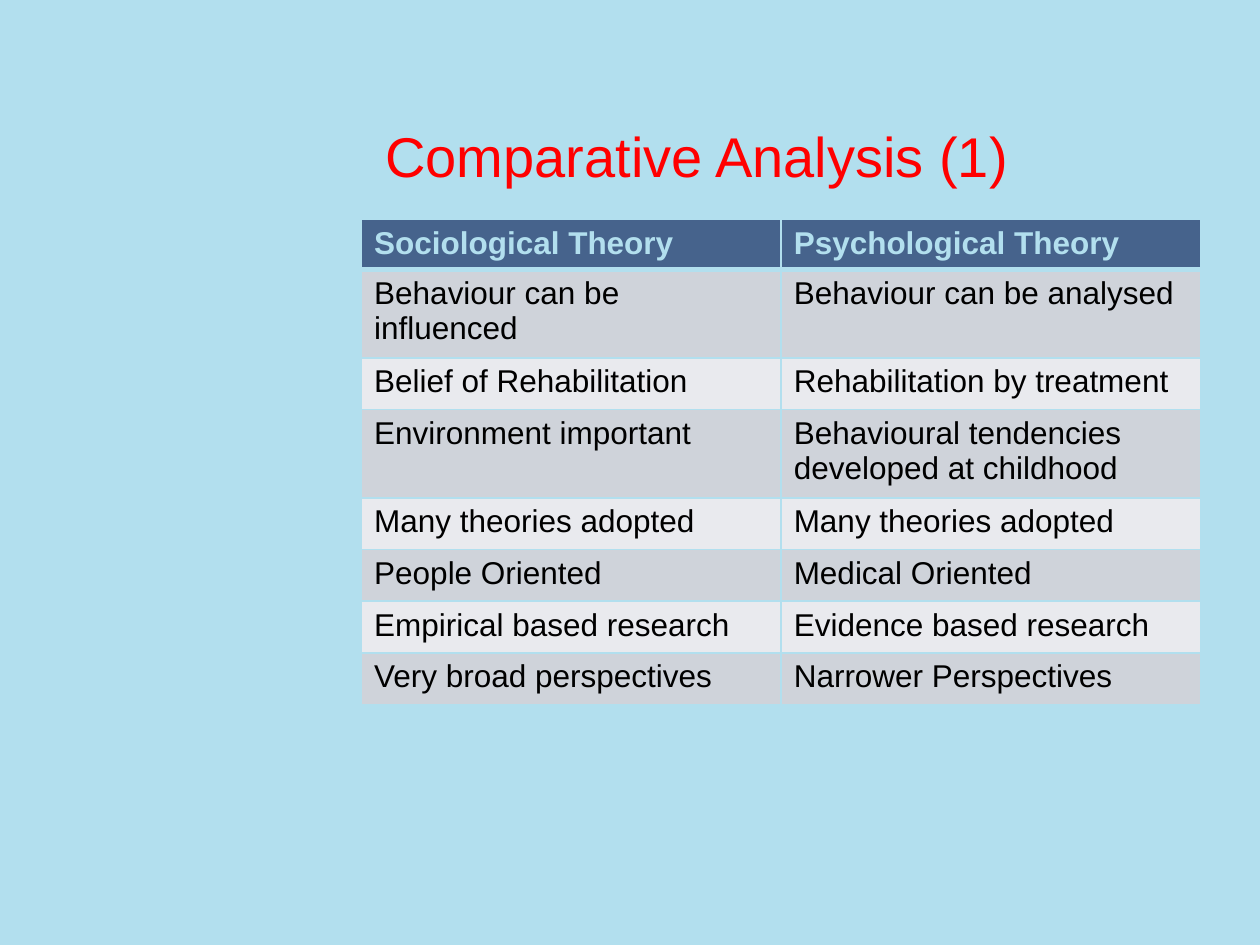
from dataclasses import dataclass

from lxml import etree
from pptx import Presentation
from pptx import util as u
from pptx.dml.color import RGBColor
from pptx.enum import text
from pptx.oxml import ns

BACKGROUND = "B2DFEE"
HEADER_FILL = "46638C"
BAND_FILLS = ("CFD3DA", "E9EAEE")
COLUMN_WIDTH = 3.33


@dataclass
class Comparison:
    sociological: str
    psychological: str
    height: float = 0.41


COMPARISONS = [
    Comparison("Sociological Theory", "Psychological Theory", 0.37),
    Comparison("Behaviour can be influenced", "Behaviour can be analysed", 0.66),
    Comparison("Belief of Rehabilitation", "Rehabilitation by treatment"),
    Comparison("Environment important", "Behavioural tendencies developed at childhood", 0.66),
    Comparison("Many theories adopted", "Many theories adopted"),
    Comparison("People Oriented", "Medical Oriented"),
    Comparison("Empirical based research", "Evidence based research"),
    Comparison("Very broad perspectives", "Narrower Perspectives"),
]


def set_fill(fill, color: str) -> None:
    fill.solid()
    fill.fore_color.rgb = RGBColor.from_string(color)


def write_text(frame, content: str, *, size: float, color: str, bold: bool = False) -> None:
    paragraph = frame.paragraphs[0]
    paragraph.alignment = text.PP_ALIGN.LEFT
    run = paragraph.add_run()
    run.text = content
    run.font.name = "Arial"
    run.font.size = u.Pt(size)
    run.font.bold = bold
    set_fill(run.font.fill, color)


def set_borders(cell, **widths: float) -> None:
    properties = cell._tc.get_or_add_tcPr()
    for position, (side, width) in enumerate(widths.items()):
        line = etree.Element(ns.qn(f"a:ln{side}"), w=str(u.Pt(width)))
        fill = etree.SubElement(line, ns.qn("a:solidFill"))
        etree.SubElement(fill, ns.qn("a:srgbClr"), val=BACKGROUND)
        properties.insert(position, line)


def add_title(slide, content: str) -> None:
    shape = slide.shapes.add_textbox(u.Inches(2.96), u.Inches(0.3), u.Inches(6.91), u.Inches(1.25))
    shape.text_frame.word_wrap = True
    shape.text_frame.vertical_anchor = text.MSO_ANCHOR.BOTTOM
    write_text(shape.text_frame, content, size=32, color="FF0000")


def add_comparison_table(slide, comparisons: list[Comparison]) -> None:
    height = sum(comparison.height for comparison in comparisons)
    table = slide.shapes.add_table(
        len(comparisons), 2, u.Inches(2.87), u.Inches(1.74),
        u.Inches(2 * COLUMN_WIDTH), u.Inches(height),
    ).table
    for column in table.columns:
        column.width = u.Inches(COLUMN_WIDTH)
    for index, comparison in enumerate(comparisons):
        header = index == 0
        table.rows[index].height = u.Inches(comparison.height)
        contents = (comparison.sociological, comparison.psychological)
        for cell, content in zip(table.rows[index].cells, contents):
            set_fill(cell.fill, HEADER_FILL if header else BAND_FILLS[(index - 1) % 2])
            set_borders(cell, L=1, R=1, T=3 if index == 1 else 1, B=3 if header else 1)
            write_text(cell.text_frame, content, size=18,
                       color=BACKGROUND if header else "000000", bold=header)


def main() -> None:
    """Build the comparison of sociological and psychological theory."""
    presentation = Presentation()
    presentation.slide_width = u.Inches(10)
    presentation.slide_height = u.Inches(7.5)
    slide = presentation.slides.add_slide(presentation.slide_layouts[6])
    set_fill(slide.background.fill, BACKGROUND)
    add_title(slide, "Comparative Analysis (1)")
    add_comparison_table(slide, COMPARISONS)
    presentation.save("out.pptx")


if __name__ == "__main__":
    main()
